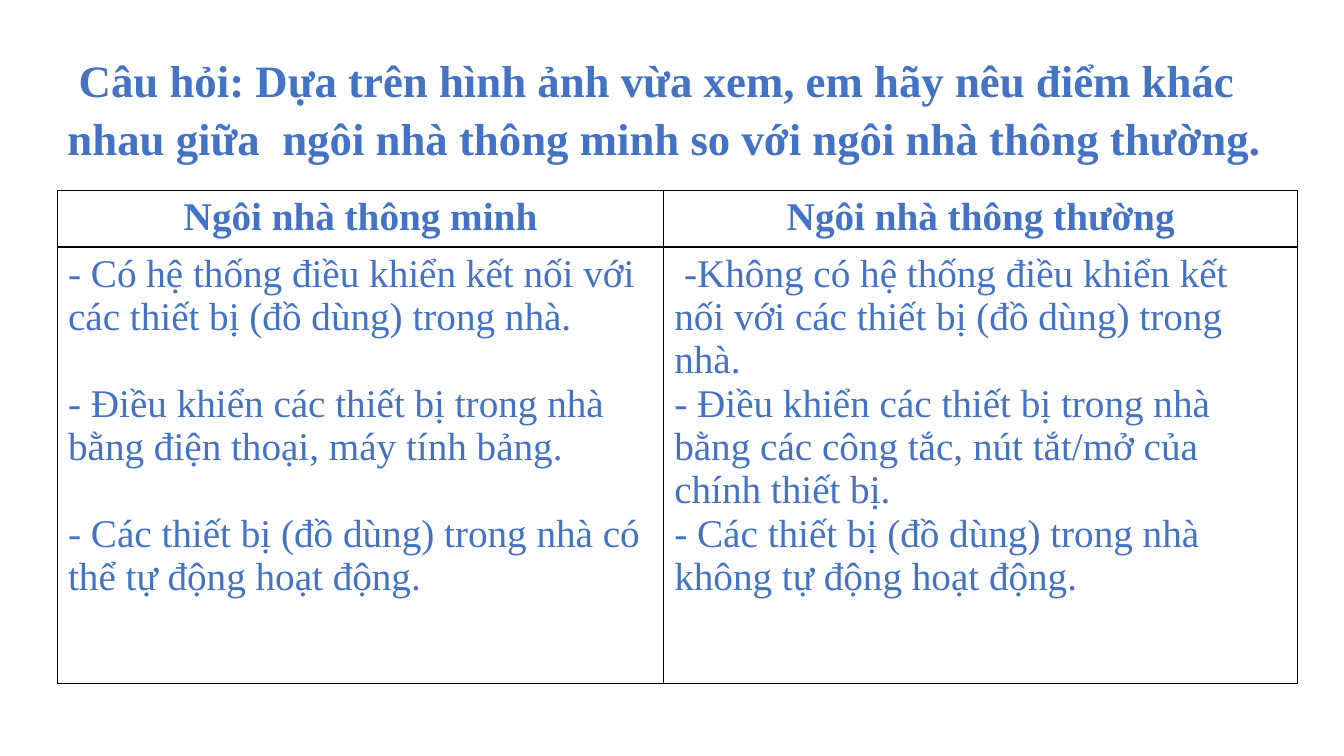
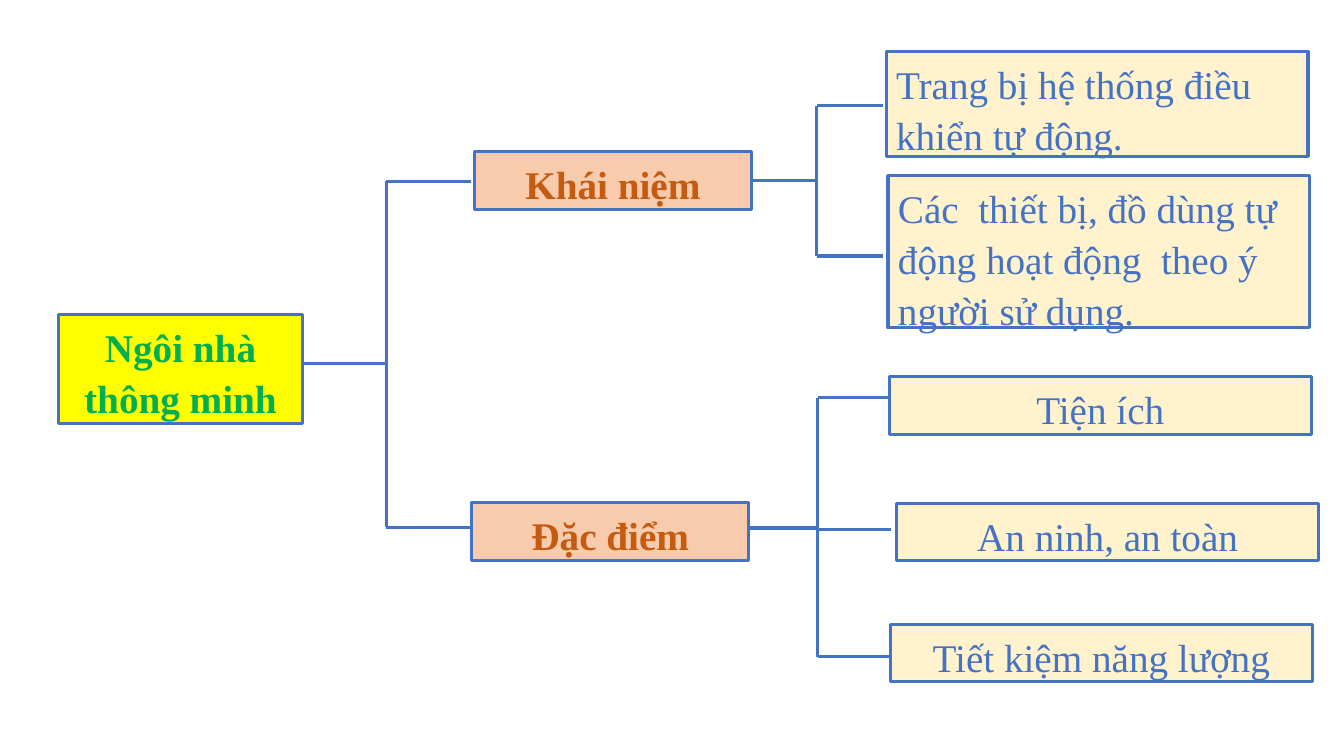
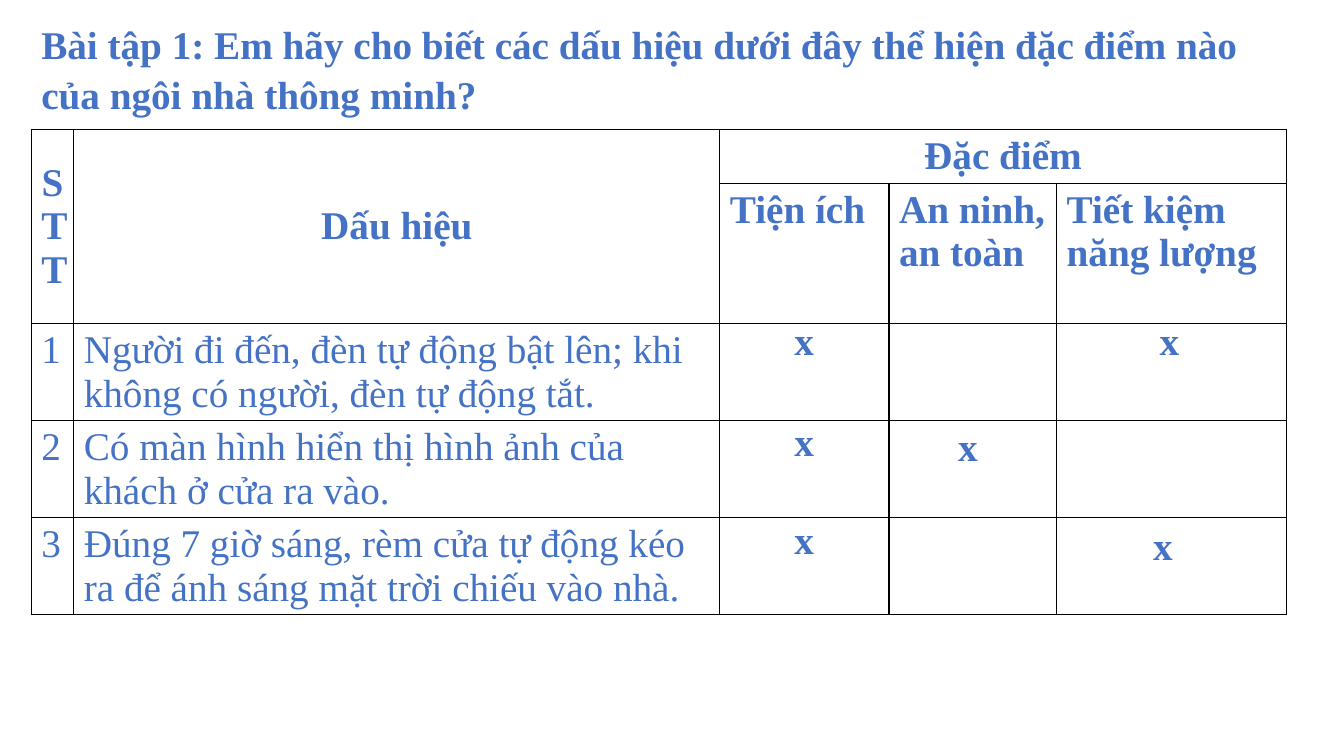
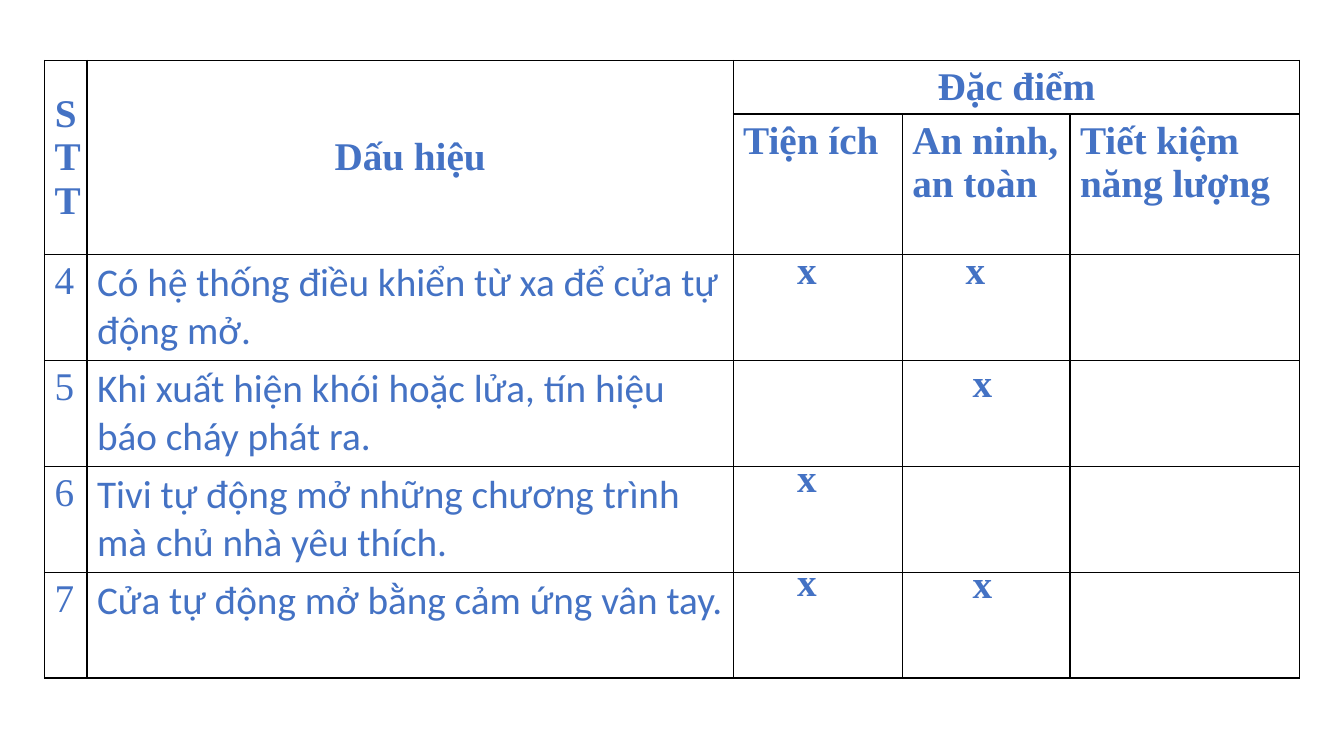
from lxml.etree import SubElement
from pptx import Presentation
from pptx.dml.color import RGBColor
from pptx.enum.shapes import MSO_CONNECTOR, MSO_SHAPE
from pptx.enum.text import MSO_ANCHOR, MSO_AUTO_SIZE, PP_ALIGN
from pptx.oxml import parse_xml
from pptx.oxml.ns import nsdecls, qn
from pptx.util import Pt

# Shared look
BLUE = RGBColor(0x44, 0x72, 0xC4)
GREEN = RGBColor(0x00, 0xB0, 0x50)
BROWN = RGBColor(0xC5, 0x5A, 0x11)
YELLOW = RGBColor(0xFF, 0xFF, 0x00)
PEACH = RGBColor(0xF8, 0xCB, 0xAD)
CREAM = RGBColor(0xFF, 0xF2, 0xCC)
SERIF, SANS = "Times New Roman", "Calibri"
TEXT_SIZE = 28
LINE_SPACING = 1.08
LEFT, CENTER = PP_ALIGN.LEFT, PP_ALIGN.CENTER
TITLE_ONLY, BLANK = 5, 6

# Tables of signs
SIGN_COLUMNS = [30.4, 461.5, 120.8, 119.8, 164]
HEADER_ROWS = [38.3, 100.3]
FEATURES = ["Tiện ích", "An ninh, an toàn", "Tiết kiệm năng lượng"]


def style_para(para, text, size=TEXT_SIZE, color=BLUE, bold=False, align=LEFT,
               font=SERIF):
    para.text = text
    para.alignment = align
    para.font.name = font
    para.font.size = Pt(size)
    para.font.bold = bold
    para.font.color.rgb = color


def fill_frame(frame, text, **style):
    frame.word_wrap = True
    frame.auto_size = MSO_AUTO_SIZE.NONE
    frame.vertical_anchor = MSO_ANCHOR.TOP
    para = frame.paragraphs[0]
    style_para(para, text, **style)
    para.line_spacing = LINE_SPACING


def add_title(page, box, text, size):
    title = page.shapes.title
    title.left, title.top, title.width, title.height = map(Pt, box)
    fill_frame(title.text_frame, text, size=size, bold=True)


# Tables
def add_grid(page, left, top, columns, rows):
    """Add an unfilled table with thin black borders."""
    table = page.shapes.add_table(
        len(rows), len(columns), Pt(left), Pt(top),
        Pt(sum(columns)), Pt(sum(rows))).table
    table.first_row = table.horz_banding = False
    for column, width in zip(table.columns, columns):
        column.width = Pt(width)
    for row, height in zip(table.rows, rows):
        row.height = Pt(height)
    for cell in table.iter_cells():
        cell.fill.background()
        properties = cell._tc.get_or_add_tcPr()
        for index, side in enumerate(("lnL", "lnR", "lnT", "lnB")):
            properties.insert(index, parse_xml(
                f'<a:{side} {nsdecls("a")} w="12700"><a:solidFill>'
                f'<a:srgbClr val="000000"/></a:solidFill></a:{side}>'))
    return table


def fill_cell(cell, text, **style):
    style_para(cell.text_frame.paragraphs[0], text, **style)


def add_comparison(page, left, top, headings, columns_text, gap_after):
    table = add_grid(page, left, top, [433, 453], [40.3, 311.8])
    for cell in table.iter_cells():
        cell.margin_left = cell.margin_right = Pt(7.7)
    for index, heading in enumerate(headings):
        fill_cell(table.cell(0, index), heading, bold=True, align=CENTER)
        frame = table.cell(1, index).text_frame
        for number, text in enumerate(columns_text[index]):
            para = frame.add_paragraph() if number else frame.paragraphs[0]
            style_para(para, text)
            if number < len(columns_text[index]) - 1:
                para.space_after = Pt(gap_after[index])


def add_signs(page, left, top, row_height, first_number, signs, font, marks):
    """Add the table of signs, then its marks at offsets from its corner."""
    rows = HEADER_ROWS + [row_height] * len(signs)
    table = add_grid(page, left, top, SIGN_COLUMNS, rows)
    table.cell(0, 0).merge(table.cell(1, 0))
    table.cell(0, 1).merge(table.cell(1, 1))
    table.cell(0, 2).merge(table.cell(0, 4))
    for column, heading in enumerate(["STT", "Dấu hiệu", "Đặc điểm"]):
        fill_cell(table.cell(0, column), heading, bold=True, align=CENTER)
    for column in (0, 1):
        table.cell(0, column).vertical_anchor = MSO_ANCHOR.MIDDLE
    for column, feature in enumerate(FEATURES, 2):
        fill_cell(table.cell(1, column), feature, bold=True)
    for index, sign in enumerate(signs):
        fill_cell(table.cell(index + 2, 0), str(first_number + index))
        fill_cell(table.cell(index + 2, 1), sign, font=font)
    for across, down in marks:
        box = page.shapes.add_textbox(
            Pt(left + across), Pt(top + down), Pt(44), Pt(63))
        fill_frame(box.text_frame, "x", bold=True)


# Mind map
def add_node(page, box, text, fill, **style):
    node = page.shapes.add_shape(MSO_SHAPE.RECTANGLE, *map(Pt, box))
    node.shadow.inherit = False
    node.fill.solid()
    node.fill.fore_color.rgb = fill
    node.line.color.rgb = BLUE
    node.line.width = Pt(2.25)
    fill_frame(node.text_frame, text, **style)


def add_line(page, x1, y1, x2, y2):
    line = page.shapes.add_connector(
        MSO_CONNECTOR.STRAIGHT, Pt(x1), Pt(y1), Pt(x2), Pt(y2))
    line.line.color.rgb = BLUE
    line.line.width = Pt(2.25)
    SubElement(line._element.spPr, qn("a:effectLst"))


def add_bracket(page, start, trunk, end, parent_y, child_ys):
    """Join a parent to its children through one upright trunk."""
    add_line(page, start, parent_y, trunk, parent_y)
    add_line(page, trunk, child_ys[0], trunk, child_ys[-1])
    for child_y in child_ys:
        add_line(page, trunk, child_y, end, child_y)


def add_mind_map(page):
    add_bracket(page, 216, 275.8, 336.2, 259.4, [129.6, 376.6])
    add_bracket(page, 536.4, 583.4, 630.7, 129, [75.4, 182.9])
    add_bracket(page, 535.4, 584.2, 636.5, 377.2, [284, 378.2, 469.2])

    add_node(page, (41.8, 224.6, 174.2, 77.8), "Ngôi nhà thông minh", YELLOW,
             color=GREEN, bold=True, align=CENTER)
    for left, top, text in [(339, 108.3, "Khái niệm"),
                            (337, 358.9, "Đặc điểm")]:
        add_node(page, (left, top, 197.8, 41.2), text, PEACH,
                 color=BROWN, bold=True, align=CENTER)
    for left, top, height, text, align in [
        (633, 36.8, 75, "Trang bị hệ thống điều khiển tự động.", LEFT),
        (634.3, 125.5, 108.8,
         "Các  thiết bị, đồ dùng tự động hoạt động  theo ý  người sử dụng.",
         LEFT),
        (635.3, 269.2, 41.2, FEATURES[0], CENTER),
        (640.5, 359.4, 41.2, FEATURES[1], CENTER),
        (636, 445.8, 41.2, FEATURES[2], CENTER),
    ]:
        add_node(page, (left, top, 301.3, height), text, CREAM, align=align)


def main():
    deck = Presentation()
    deck.slide_width, deck.slide_height = Pt(960), Pt(540)

    def new_page(layout):
        return deck.slides.add_slide(deck.slide_layouts[layout])

    # Question: smart house against ordinary house
    page = new_page(TITLE_ONLY)
    add_title(page, (41, 31, 876, 85),
              " Câu hỏi: Dựa trên hình ảnh vừa xem, em hãy nêu điểm khác nhau "
              "giữa  ngôi nhà thông minh so với ngôi nhà thông thường.", 32)
    add_comparison(
        page, 41, 136.2, ["Ngôi nhà thông minh", "Ngôi nhà thông thường"],
        [["- Có hệ thống điều khiển kết nối với các thiết bị (đồ dùng) "
          "trong nhà.",
          "- Điều khiển các thiết bị trong nhà bằng điện thoại, "
          "máy tính bảng.",
          "- Các thiết bị (đồ dùng) trong nhà có thể tự động hoạt động."],
         [" -Không có hệ thống điều khiển kết nối với các thiết bị (đồ dùng) "
          "trong nhà.",
          "- Điều khiển các thiết bị trong nhà bằng các công tắc, "
          "nút tắt/mở của chính thiết bị.",
          "- Các thiết bị (đồ dùng) trong nhà không tự động hoạt động."]],
        gap_after=[31, 0])

    # Mind map of the smart house
    add_mind_map(new_page(BLANK))

    # Exercise 1, first signs
    page = new_page(TITLE_ONLY)
    add_title(page, (22.3, 8, 896.5, 78),
              "Bài tập 1: Em hãy cho biết các dấu hiệu dưới đây thể hiện "
              "đặc điểm nào của ngôi nhà thông minh?", TEXT_SIZE)
    add_signs(
        page, 22.3, 92.6, 69.3, 1,
        ["Người đi đến, đèn tự động bật lên; khi không có người, "
         "đèn tự động tắt.",
         "Có màn hình hiển thị hình ảnh của khách ở cửa ra vào.",
         "Đúng 7 giờ sáng, rèm cửa tự động kéo ra để ánh sáng mặt trời "
         "chiếu vào nhà."],
        SERIF,
        [(538, 127), (799, 127), (538, 199), (655, 202.6),
         (538, 269), (794.3, 273.6)])

    # Exercise 1, remaining signs
    add_signs(
        new_page(BLANK), 31.8, 43.2, 75.6, 4,
        ["Có hệ thống điều khiển từ xa để cửa tự động mở.",
         "Khi xuất hiện khói hoặc lửa, tín hiệu báo cháy phát ra.",
         "Tivi tự động mở những chương trình mà chủ nhà yêu thích.",
         "Cửa tự động mở bằng cảm ứng vân tay."],
        SANS,
        [(530.5, 126), (650.8, 126), (655.8, 206.6), (530.5, 274.3),
         (530.5, 348.5), (655.8, 350)])

    deck.save("out.pptx")


if __name__ == "__main__":
    main()
